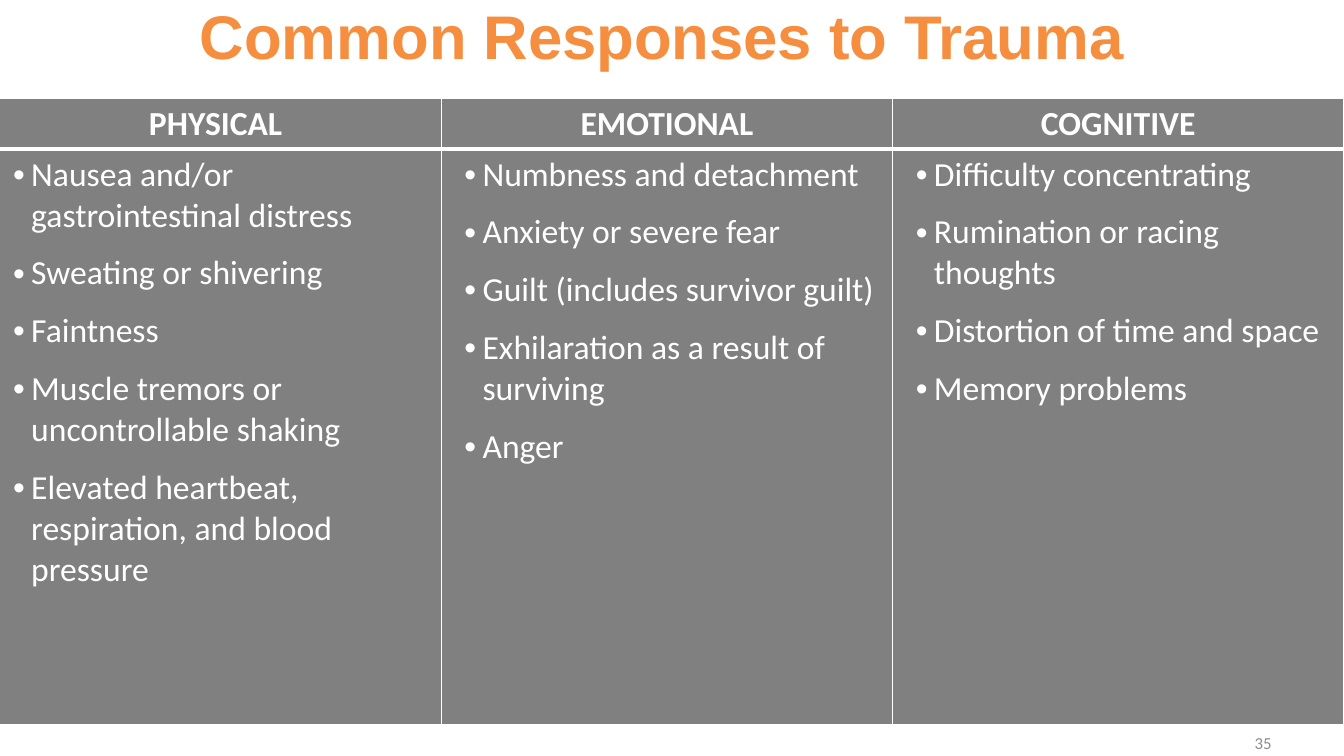
from lxml.etree import SubElement
from pptx import Presentation
from pptx.dml.color import RGBColor
from pptx.enum.text import MSO_ANCHOR, PP_ALIGN
from pptx.oxml.ns import qn
from pptx.util import Inches, Pt

RESPONSES = {
    "PHYSICAL": [
        "Nausea and/or gastrointestinal distress",
        "Sweating or shivering",
        "Faintness",
        "Muscle tremors or uncontrollable shaking",
        "Elevated heartbeat, respiration, and blood pressure",
    ],
    "EMOTIONAL": [
        "Numbness and detachment",
        "Anxiety or severe fear",
        "Guilt (includes survivor guilt)",
        "Exhilaration as a result of surviving",
        "Anger",
    ],
    "COGNITIVE": [
        "Difficulty concentrating",
        "Rumination or racing thoughts",
        "Distortion of time and space",
        "Memory problems",
    ],
}


def color(value):
    return RGBColor.from_string(value)


def write(paragraph, text, font="Calibri", size=24, fill="FFFFFF", bold=False,
          align=PP_ALIGN.LEFT, line_spacing=None):
    paragraph.alignment = align
    paragraph.line_spacing = line_spacing
    run = paragraph.add_run()
    run.text = text
    run.font.name = font
    run.font.size = Pt(size)
    run.font.bold = bold
    run.font.color.rgb = color(fill)


class TraumaSlide:
    """Holds the table style and the slide being built."""

    cell_fill = "808080"
    border = "FFFFFF"

    def __init__(self, presentation):
        self.slide = presentation.slides.add_slide(presentation.slide_layouts[5])

    def title(self, text, left, top, width, height):
        shape = self.slide.shapes.title
        shape.left, shape.top = Inches(left), Inches(top)
        shape.width, shape.height = Inches(width), Inches(height)
        shape.text_frame.vertical_anchor = MSO_ANCHOR.MIDDLE
        write(shape.text_frame.paragraphs[0], text, font="Arial", size=44,
              fill="F58E3F", bold=True, align=PP_ALIGN.CENTER, line_spacing=0.9)

    def page_number(self, text, left, top, width, height):
        shape = self.slide.shapes.add_textbox(
            Inches(left), Inches(top), Inches(width), Inches(height))
        shape.text_frame.word_wrap = True
        shape.text_frame.vertical_anchor = MSO_ANCHOR.MIDDLE
        write(shape.text_frame.paragraphs[0], text, size=12, fill="8C8C8C",
              align=PP_ALIGN.RIGHT)

    def format_cell(self, cell, top, bottom):
        properties = cell._tc.get_or_add_tcPr()
        for side, width in (("L", 1), ("R", 1), ("T", top), ("B", bottom)):
            line = SubElement(properties, qn(f"a:ln{side}"), w=str(Pt(width)))
            solid = SubElement(line, qn("a:solidFill"))
            SubElement(solid, qn("a:srgbClr"), val=self.border)
        cell.fill.solid()
        cell.fill.fore_color.rgb = color(self.cell_fill)

    def bullets(self, text_frame, items):
        for index, item in enumerate(items):
            paragraph = text_frame.add_paragraph() if index else text_frame.paragraphs[0]
            paragraph.space_before = Pt(6 if index else 0)
            paragraph.space_after = Pt(6)
            properties = paragraph._p.get_or_add_pPr()
            properties.set("marL", str(Inches(0.31)))
            properties.set("indent", str(Inches(-0.18)))
            SubElement(properties, qn("a:buFont"), typeface="Arial")
            SubElement(properties, qn("a:buChar"), char="•")
            write(paragraph, item)

    def table(self, columns, left, top, width, row_heights):
        table = self.slide.shapes.add_table(
            len(row_heights), len(columns), Inches(left), Inches(top),
            Inches(width), Inches(sum(row_heights))).table
        table.first_row = table.horz_banding = False
        for row, height in zip(table.rows, row_heights):
            row.height = Inches(height)
        for index, (heading, items) in enumerate(columns.items()):
            header, body = table.cell(0, index), table.cell(1, index)
            self.format_cell(header, top=1, bottom=3)
            self.format_cell(body, top=3, bottom=1)
            write(header.text_frame.paragraphs[0], heading, bold=True,
                  align=PP_ALIGN.CENTER)
            self.bullets(body.text_frame, items)


def main():
    presentation = Presentation()
    presentation.slide_width = Inches(13.33)
    presentation.slide_height = Inches(7.5)
    slide = TraumaSlide(presentation)
    slide.page_number("35", 9.71, 7.17, 3, 0.4)
    slide.table(RESPONSES, -0.1, 0.98, 13.43, (0.5, 5.71))
    slide.title("Common Responses to Trauma", 1.05, 0, 11.04, 0.78)
    presentation.save("out.pptx")


if __name__ == "__main__":
    main()
